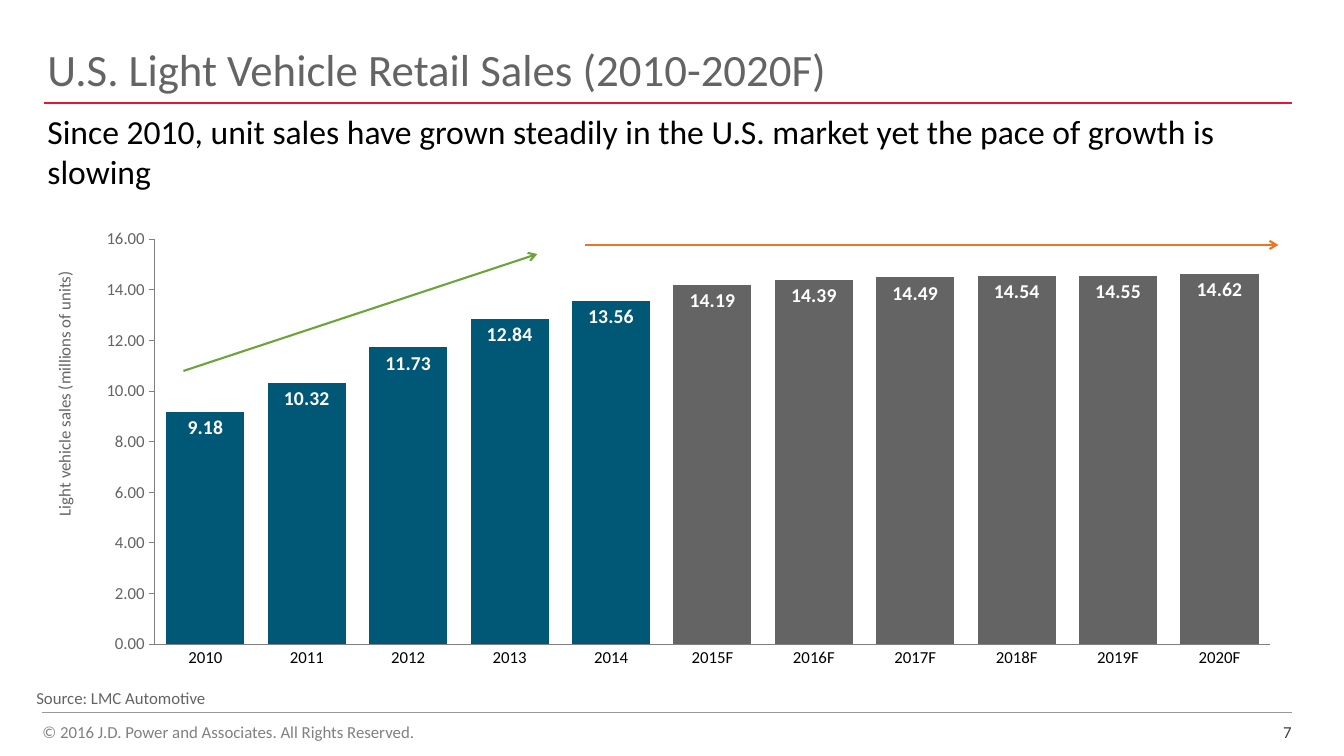
from dataclasses import dataclass
from lxml.etree import SubElement
from pptx import Presentation
from pptx.chart.data import CategoryChartData
from pptx.dml.color import RGBColor
from pptx.enum.chart import XL_CHART_TYPE, XL_LABEL_POSITION, XL_TICK_MARK
from pptx.enum.shapes import MSO_CONNECTOR
from pptx.enum.text import MSO_ANCHOR, PP_ALIGN
from pptx.oxml.ns import qn
from pptx.util import Pt


@dataclass(frozen=True)
class Theme:
    font: str = "Calibri"
    black: RGBColor = RGBColor.from_string("000000")
    white: RGBColor = RGBColor.from_string("FFFFFF")
    gray: RGBColor = RGBColor.from_string("646464")
    dark_gray: RGBColor = RGBColor.from_string("404040")
    mid_gray: RGBColor = RGBColor.from_string("808080")
    rule_gray: RGBColor = RGBColor.from_string("999999")
    red: RGBColor = RGBColor.from_string("E31837")
    blue: RGBColor = RGBColor.from_string("005776")
    green: RGBColor = RGBColor.from_string("6BA539")
    orange: RGBColor = RGBColor.from_string("E87722")
    title: int = 32
    subtitle: int = 24
    label: int = 14
    small: int = 12


theme = Theme()
PX = 9144  # 100 px to the inch


def set_font(font, size, color, bold=False):
    font.name, font.size, font.bold = theme.font, Pt(size), bold
    font.color.rgb = color


def place_in_chart(element, **fractions):
    layout = element.find(qn("c:layout"))
    if layout is None:
        layout = element.makeelement(qn("c:layout"))
        element.insert(0, layout)
    manual = SubElement(layout, qn("c:manualLayout"))
    if "w" in fractions:
        SubElement(manual, qn("c:layoutTarget")).set("val", "inner")
    for side in "xy":
        SubElement(manual, qn(f"c:{side}Mode")).set("val", "edge")
    for name, value in fractions.items():
        SubElement(manual, qn(f"c:{name}")).set("val", str(value))


deck = Presentation()
deck.slide_width, deck.slide_height = 1333 * PX, 750 * PX
page = deck.slides.add_slide(deck.slide_layouts[5])

# Title, subtitle, source and footer
texts = [
    ("U.S. Light Vehicle Retail Sales (2010-2020F)", (47, 45, 1231, 50),
     theme.title, theme.gray, MSO_ANCHOR.BOTTOM, PP_ALIGN.LEFT, (0, 0)),
    ("Since 2010, unit sales have grown steadily in the U.S. market yet the pace of growth is slowing",
     (47, 110, 1233, 50), theme.subtitle, theme.black, MSO_ANCHOR.TOP, PP_ALIGN.LEFT, (0, 0)),
    ("Source: LMC Automotive", (23, 675, 1218, 26),
     theme.small, theme.gray, MSO_ANCHOR.TOP, PP_ALIGN.LEFT, (13, 7)),
    ("© 2016 J.D. Power and Associates. All Rights Reserved.", (42, 710, 1230, 26),
     theme.small, theme.mid_gray, MSO_ANCHOR.BOTTOM, PP_ALIGN.LEFT, (0, 0)),
    ("7", (1207, 707, 74, 29),
     theme.small, theme.dark_gray, MSO_ANCHOR.BOTTOM, PP_ALIGN.RIGHT, (0, 0)),
]
for index, (text, bounds, size, color, anchor, align, (inset_x, inset_y)) in enumerate(texts):
    box = page.shapes.title if index == 0 else page.shapes.add_textbox(0, 0, 0, 0)
    box.left, box.top, box.width, box.height = [value * PX for value in bounds]
    frame = box.text_frame
    frame.text = text
    frame.word_wrap = True
    frame.vertical_anchor = anchor
    frame.margin_left = frame.margin_right = inset_x * PX
    frame.margin_top = frame.margin_bottom = inset_y * PX
    para = frame.paragraphs[0]
    para.alignment = align
    set_font(para.runs[0].font, size, color)

# Sales chart
actual = {"2010": 9.18, "2011": 10.32, "2012": 11.73, "2013": 12.84, "2014": 13.56}
forecast = {"2015F": 14.19, "2016F": 14.39, "2017F": 14.49,
            "2018F": 14.54, "2019F": 14.55, "2020F": 14.62}
sales = actual | forecast
data = CategoryChartData()
data.categories = list(sales)
data.add_series("Series 1", list(sales.values()))
chart = page.shapes.add_chart(XL_CHART_TYPE.COLUMN_CLUSTERED, 37 * PX, 214 * PX,
                              1239 * PX, 475 * PX, data).chart
chart.has_legend = chart.has_title = False
set_font(chart.font, theme.small, theme.black)
place_in_chart(chart.element.find(".//" + qn("c:plotArea")), x=0.094, y=0.049, w=0.893, h=0.846)

plot = chart.plots[0]
plot.gap_width = 30
plot.vary_by_categories = False
for index, year in enumerate(sales):
    fill = plot.series[0].points[index].format.fill
    fill.solid()
    fill.fore_color.rgb = theme.blue if year in actual else theme.gray
plot.has_data_labels = True
labels = plot.data_labels
labels.show_value = True
labels.position = XL_LABEL_POSITION.INSIDE_END
labels.number_format, labels.number_format_is_linked = "#,##0.00", False
set_font(labels.font, theme.label, theme.white, bold=True)

# Chart axes
years, units = chart.category_axis, chart.value_axis
years.major_tick_mark = XL_TICK_MARK.NONE
units.major_tick_mark = XL_TICK_MARK.OUTSIDE
units.minimum_scale, units.maximum_scale, units.major_unit = 0, 16, 2
units.has_major_gridlines = False
units.tick_labels.number_format = "#,##0.00"
units.tick_labels.number_format_is_linked = False
for axis, color in ((years, theme.black), (units, theme.gray)):
    set_font(axis.tick_labels.font, theme.small, color)
    axis.format.line.color.rgb = theme.mid_gray
    axis.format.line.width = Pt(0.75)
axis_title = units.axis_title
axis_title.text_frame.text = "Light vehicle sales (millions of units)"
set_font(axis_title.text_frame.paragraphs[0].runs[0].font, theme.small, theme.gray)
title_element = units.axis_title.format.line and chart.element.find(".//" + qn("c:valAx") + "/" + qn("c:title"))
title_element.find(".//" + qn("a:bodyPr")).set("rot", "-5400000")
place_in_chart(title_element, x=0.01, y=0.11)

# Rules and trend arrows
lines = [
    (44, 102, 1281, 102, theme.red, 1.5, False),
    (42, 707, 1281, 707, theme.rule_gray, 0.5, False),
    (182, 368, 533, 252, theme.green, 1.5, True),
    (580, 243, 1268, 243, theme.orange, 1.5, True),
]
for x1, y1, x2, y2, color, width, is_arrow in lines:
    line = page.shapes.add_connector(MSO_CONNECTOR.STRAIGHT, x1 * PX, y1 * PX, x2 * PX, y2 * PX)
    line.line.color.rgb = color
    line.line.width = Pt(width)
    if is_arrow:
        SubElement(line.line._get_or_add_ln(), qn("a:tailEnd")).set("type", "arrow")
    SubElement(line._element.spPr, qn("a:effectLst"))

deck.save("out.pptx")
